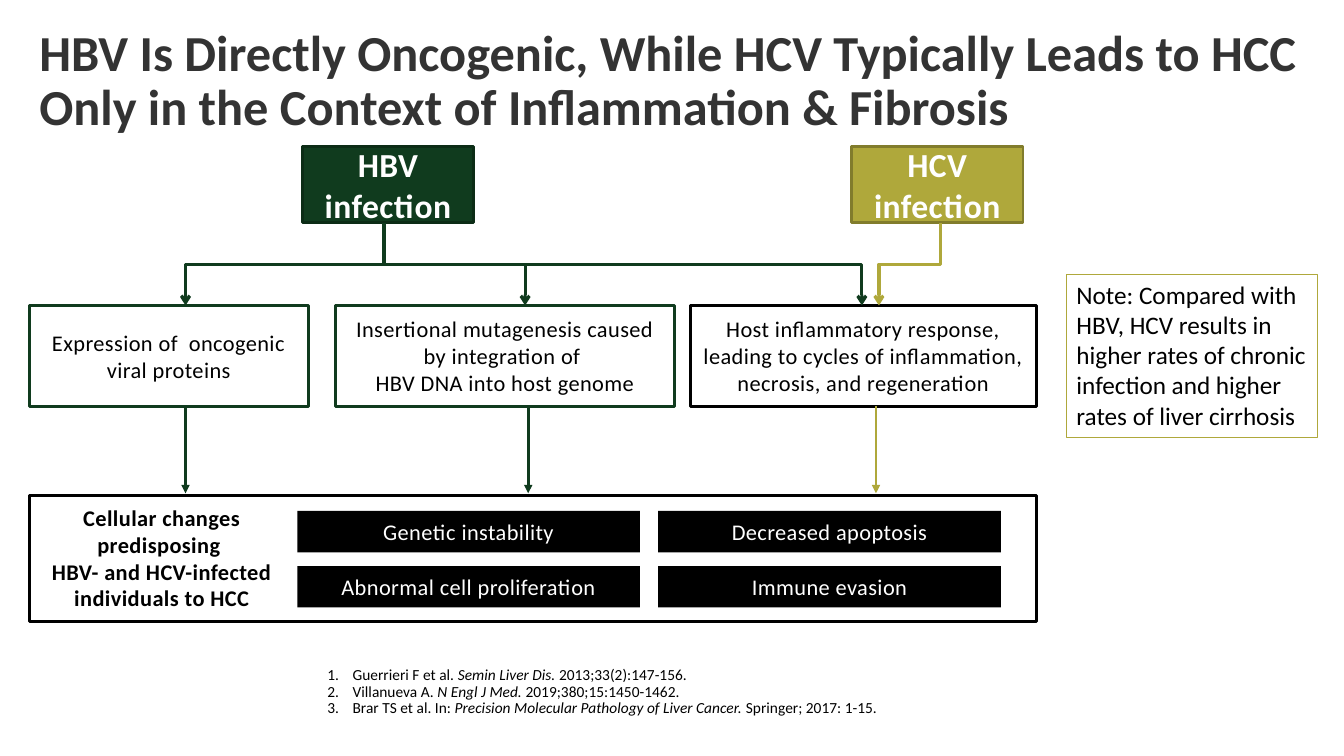
from lxml import etree
from pptx import Presentation
from pptx.dml.color import RGBColor
from pptx.enum.shapes import MSO_CONNECTOR, MSO_SHAPE
from pptx.enum.text import MSO_ANCHOR, MSO_AUTO_SIZE, PP_ALIGN
from pptx.oxml.ns import qn
from pptx.util import Pt

RECT = MSO_SHAPE.RECTANGLE
STRAIGHT, ELBOW = MSO_CONNECTOR.STRAIGHT, MSO_CONNECTOR.ELBOW
LEFT, CENTER = PP_ALIGN.LEFT, PP_ALIGN.CENTER
TOP, MIDDLE = MSO_ANCHOR.TOP, MSO_ANCHOR.MIDDLE

COLORS = {
    name: RGBColor.from_string(value)
    for name, value in {
        "heading": "333333", "black": "000000", "white": "FFFFFF",
        "hbv": "103B1E", "hbv_edge": "0C2C16",
        "hcv": "AFA83B", "hcv_edge": "817C2C",
    }.items()
}


def write(shape, text, size, color="black", bold=False, spacing=30, align=CENTER, anchor=MIDDLE):
    """Fill a shape with one paragraph of formatted text."""
    frame = shape.text_frame
    for key, value in {"text": text, "word_wrap": True, "vertical_anchor": anchor,
                       "auto_size": MSO_AUTO_SIZE.NONE}.items():
        setattr(frame, key, value)
    paragraph = frame.paragraphs[0]
    paragraph.alignment = align
    for run in paragraph.runs:
        for key, value in {"name": "Calibri", "size": Pt(size), "bold": bold}.items():
            setattr(run.font, key, value)
        run.font.color.rgb = COLORS[color]
        if spacing:
            run.font._element.set("spc", str(spacing))


def add_box(left, top, width, height, fill=None, edge=None, weight=2):
    """Add a flat rectangle with an optional fill and edge."""
    box = slide.shapes.add_shape(RECT, Pt(left), Pt(top), Pt(width), Pt(height))
    box.shadow.inherit = False
    if fill:
        box.fill.solid()
        box.fill.fore_color.rgb = COLORS[fill]
    else:
        box.fill.background()
    if edge:
        box.line.color.rgb = COLORS[edge]
        box.line.width = Pt(weight)
    else:
        box.line.fill.background()
    return box


prs = Presentation()
prs.slide_width, prs.slide_height = Pt(960), Pt(540)
slide = prs.slides.add_slide(prs.slide_layouts[5])

# Title
title = slide.shapes.title
title.left, title.top, title.width, title.height = Pt(20.9), Pt(13.7), Pt(920), Pt(90)
write(title, "HBV Is Directly Oncogenic, While HCV Typically Leads to HCC "
      "Only in the Context of Inflammation & Fibrosis",
      36, "heading", bold=True, spacing=0, align=LEFT)
title.text_frame.paragraphs[0].line_spacing = 0.9

# Infections
INFECTION_TOP, INFECTION_HEIGHT = 104.4, 54.7
for virus, left in (("HBV", 216), ("HCV", 608.4)):
    key = virus.lower()
    infection = add_box(left, INFECTION_TOP, 122.4, INFECTION_HEIGHT, key, key + "_edge")
    write(infection, virus + " infection", 24, "white", bold=True)

# Mechanisms
MECHANISM_TOP, MECHANISM_HEIGHT = 218.2, 72
mechanisms = (
    (20.9, 199.4, "hbv", "Expression of  oncogenic viral proteins"),
    (239.8, 241.9, "hbv", "Insertional mutagenesis caused by integration of \vHBV DNA into host genome"),
    (493.2, 247, "black", "Host inflammatory response, leading to cycles of inflammation, "
                          "necrosis, and regeneration"),
)
for left, width, edge, text in mechanisms:
    write(add_box(left, MECHANISM_TOP, width, MECHANISM_HEIGHT, "white", edge), text, 16)

# Cellular changes
add_box(20.9, 354.2, 719.3, 90, "white", "black", 2.25)
changes_label = slide.shapes.add_textbox(Pt(23.8), Pt(360), Pt(183.6), Pt(77.8))
write(changes_label, "Cellular changes predisposing \vHBV- and HCV-infected individuals to HCC",
      16, bold=True, anchor=TOP)
for side in ("left", "top", "right", "bottom"):
    setattr(changes_label.text_frame, "margin_" + side, 0)
changes = ("Genetic instability", "Decreased apoptosis",
           "Abnormal cell proliferation", "Immune evasion")
for index, change in enumerate(changes):
    row, column = divmod(index, 2)
    change_box = add_box(212.4 + column * 257.8, 365 + row * 39.3, 244.8, 29.5, "black")
    write(change_box, change, 16, "white")

# Arrows: start x, end x, start y, end y, colour, weight, head
branch_top, branch_bottom = INFECTION_TOP + INFECTION_HEIGHT, MECHANISM_TOP
branches = ((671.8, 627.8, "hcv"), (274.3, 375.1, "hbv"),
            (274.3, 132.5, "hbv"), (273.6, 615.6, "hbv"))
drops = ((132.5, "hbv"), (377.3, "hbv"), (625.7, "hcv"))
arrows = [(x1, x2, branch_top, branch_bottom, color, 2.25, "arrow") for x1, x2, color in branches]
arrows += [(x, x, 290.2, 352.4, color, 2, "triangle") for x, color in drops]
for x1, x2, y1, y2, color, weight, head in arrows:
    if x1 == x2:
        arrow = slide.shapes.add_connector(STRAIGHT, Pt(x1), Pt(y1), Pt(x2), Pt(y2))
    else:
        # A quarter turn makes the elbow leave its box downwards
        middle_x, middle_y = (x1 + x2) / 2, (y1 + y2) / 2
        half_height = abs(x2 - x1) / 2
        half_width = (y2 - y1) / 2 * (1 if x2 > x1 else -1)
        arrow = slide.shapes.add_connector(
            ELBOW, Pt(middle_x + half_width), Pt(middle_y - half_height),
            Pt(middle_x - half_width), Pt(middle_y + half_height))
        turn = 270 if x2 > x1 else 90
        arrow._element.spPr.find(qn("a:xfrm")).set("rot", str(turn * 60000))
    arrow.line.color.rgb = COLORS[color]
    arrow.line.width = Pt(weight)
    etree.SubElement(arrow.line._get_or_add_ln(), qn("a:tailEnd"), type=head)
    etree.SubElement(arrow._element.spPr, qn("a:effectLst"))

# Note
note = add_box(768, 195.8, 179.3, 116.6, edge="hcv", weight=0.75)
note.left = Pt(761.8)
write(note, "Note: Compared with HBV, HCV results in higher rates of chronic infection "
      "and higher rates of liver cirrhosis", 18, spacing=0, align=LEFT, anchor=TOP)

# References
references = (
    ("Guerrieri F et al. ", "Semin Liver Dis. ", "2013;33(2):147-156."),
    ("Villanueva A. ", "N Engl J Med. ", "2019;380;15:1450-1462."),
    ("Brar TS et al. In: ", "Precision Molecular Pathology of Liver Cancer. ",
     "Springer; 2017: 1-15."),
)
reference_frame = slide.shapes.add_textbox(Pt(226.8), Pt(473), Pt(714.2), Pt(57.6)).text_frame
reference_frame.word_wrap = True
for index, parts in enumerate(references):
    paragraph = reference_frame.add_paragraph() if index else reference_frame.paragraphs[0]
    paragraph.line_spacing = 0.9
    properties = paragraph._p.get_or_add_pPr()
    properties.set("marL", str(Pt(18)))
    properties.set("indent", str(-Pt(18)))
    etree.SubElement(properties, qn("a:buFont"), typeface="+mj-lt")
    etree.SubElement(properties, qn("a:buAutoNum"), type="arabicPeriod")
    for position, part in enumerate(parts):
        run = paragraph.add_run()
        run.text = part
        for key, value in {"name": "Calibri", "size": Pt(11), "italic": position == 1}.items():
            setattr(run.font, key, value)
        run.font.color.rgb = COLORS["black"]

prs.save("out.pptx")
